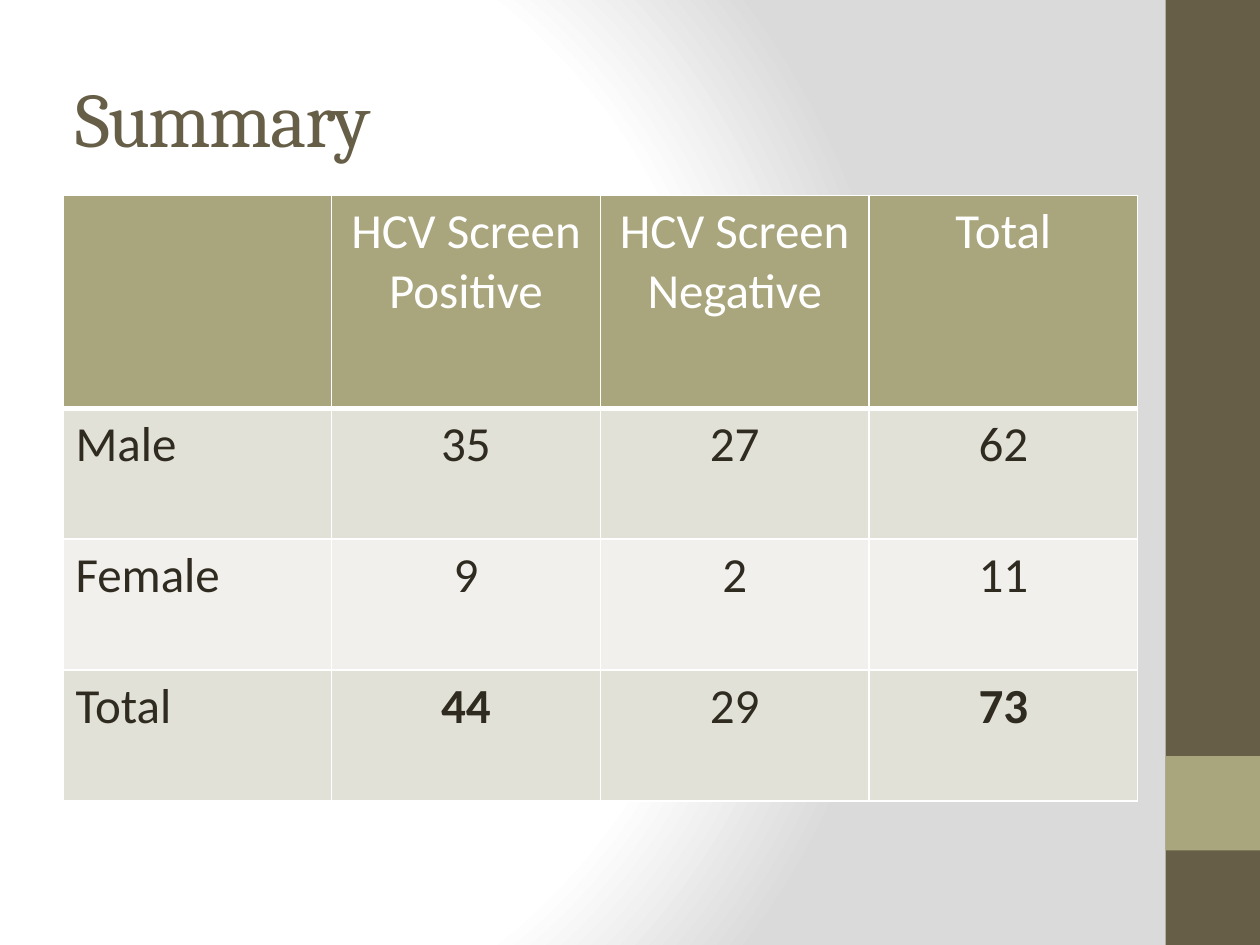
"""Build the HCV screening summary slide."""
from pptx import Presentation
from pptx.dml.color import RGBColor
from pptx.enum.shapes import MSO_SHAPE as Shape
from pptx.enum.text import MSO_ANCHOR as Anchor, PP_ALIGN as Align
from pptx.oxml import parse_xml
from pptx.util import Inches, Pt

NS = 'xmlns:a="http://schemas.openxmlformats.org/drawingml/2006/main"'
NS_P = 'xmlns:p="http://schemas.openxmlformats.org/presentationml/2006/main"'
DARK, OLIVE, INK, WHITE = "675E47", "A9A57C", "2F2B20", "FFFFFF"
BANDS = ["E2E1D7", "F1F0EC"]
STOPS = [(0, WHITE), (75, WHITE), (100, "DADADA")]
FOCUS = {"l": 20, "t": 50, "r": 100, "b": 50}
BARS = [(0, 7.5, DARK), (6, 0.75, OLIVE)]
TITLE = "Summary"
ROWS = [
    ["", "HCV Screen Positive", "HCV Screen Negative", "Total"],
    ["Male", "35", "27", "62"],
    ["Female", "9", "2", "11"],
    ["Total", "44", "29", "73"],
]
BOLD = {"44", "73"}
HEIGHTS = [1.69, 1.04, 1.04, 1.04]
TITLE_FONT = {"name": "Cambria", "size": Pt(44)}
CELL_FONT = {"name": "Calibri", "size": Pt(28)}


def rgb(value):
    return RGBColor.from_string(value)


def write(tf, text, color, fmt, align=Align.LEFT):
    p = tf.paragraphs[0]
    p.alignment = align
    r = p.add_run()
    r.text = text
    r.font.color.rgb = rgb(color)
    for name, value in fmt.items():
        setattr(r.font, name, value)
    return r


def add_background(s):
    stops = "".join(
        f'<a:gs pos="{pos * 1000}"><a:srgbClr val="{color}"/></a:gs>' for pos, color in STOPS)
    focus = " ".join(f'{side}="{pct * 1000}"' for side, pct in FOCUS.items())
    s.element.cSld.insert(0, parse_xml(
        f'<p:bg {NS} {NS_P}><p:bgPr><a:gradFill rotWithShape="1"><a:gsLst>{stops}</a:gsLst>'
        f'<a:path path="circle"><a:fillToRect {focus}/></a:path></a:gradFill>'
        '<a:effectLst/></p:bgPr></p:bg>'))


def add_bars(s):
    for top, height, color in BARS:
        sp = s.shapes.add_shape(
            Shape.RECTANGLE, Inches(9.25), Inches(top), Inches(0.75), Inches(height))
        sp.shadow.inherit = False
        sp.fill.solid()
        sp.fill.fore_color.rgb = rgb(color)
        sp.line.fill.background()


def add_title(s):
    tf = s.shapes.add_textbox(Inches(0.5), Inches(0.3), Inches(8.33), Inches(1.25)).text_frame
    tf.word_wrap = True
    tf.vertical_anchor = Anchor.MIDDLE
    r = write(tf, TITLE, DARK, TITLE_FONT)
    r.font._element.set("spc", "-100")


def set_borders(cell, bottom):
    widths = {"L": 1, "R": 1, "T": 1, "B": bottom}
    for i, (side, width) in enumerate(widths.items()):
        cell._tc.get_or_add_tcPr().insert(i, parse_xml(
            f'<a:ln{side} {NS} w="{Pt(width)}"><a:solidFill><a:srgbClr val="{WHITE}"/>'
            f'</a:solidFill></a:ln{side}>'))


def add_summary_table(s):
    frame = s.shapes.add_table(
        len(ROWS), len(ROWS[0]), Inches(0.5), Inches(1.55), Inches(8.53), Inches(sum(HEIGHTS)))
    table = frame.table
    for i, (row, height) in enumerate(zip(ROWS, HEIGHTS)):
        table.rows[i].height = Inches(height)
        fill = BANDS[(i - 1) % 2] if i else OLIVE
        for j, text in enumerate(row):
            cell = table.cell(i, j)
            cell.fill.solid()
            cell.fill.fore_color.rgb = rgb(fill)
            set_borders(cell, 1 if i else 3)
            if text:
                write(cell.text_frame, text, INK if i else WHITE,
                      {**CELL_FONT, "bold": text in BOLD}, Align.CENTER if j else Align.LEFT)


def main():
    prs = Presentation()
    prs.slide_width, prs.slide_height = Inches(10), Inches(7.5)
    s = prs.slides.add_slide(prs.slide_layouts[6])
    add_background(s)
    add_bars(s)
    add_title(s)
    add_summary_table(s)
    prs.save("out.pptx")


if __name__ == "__main__":
    main()
